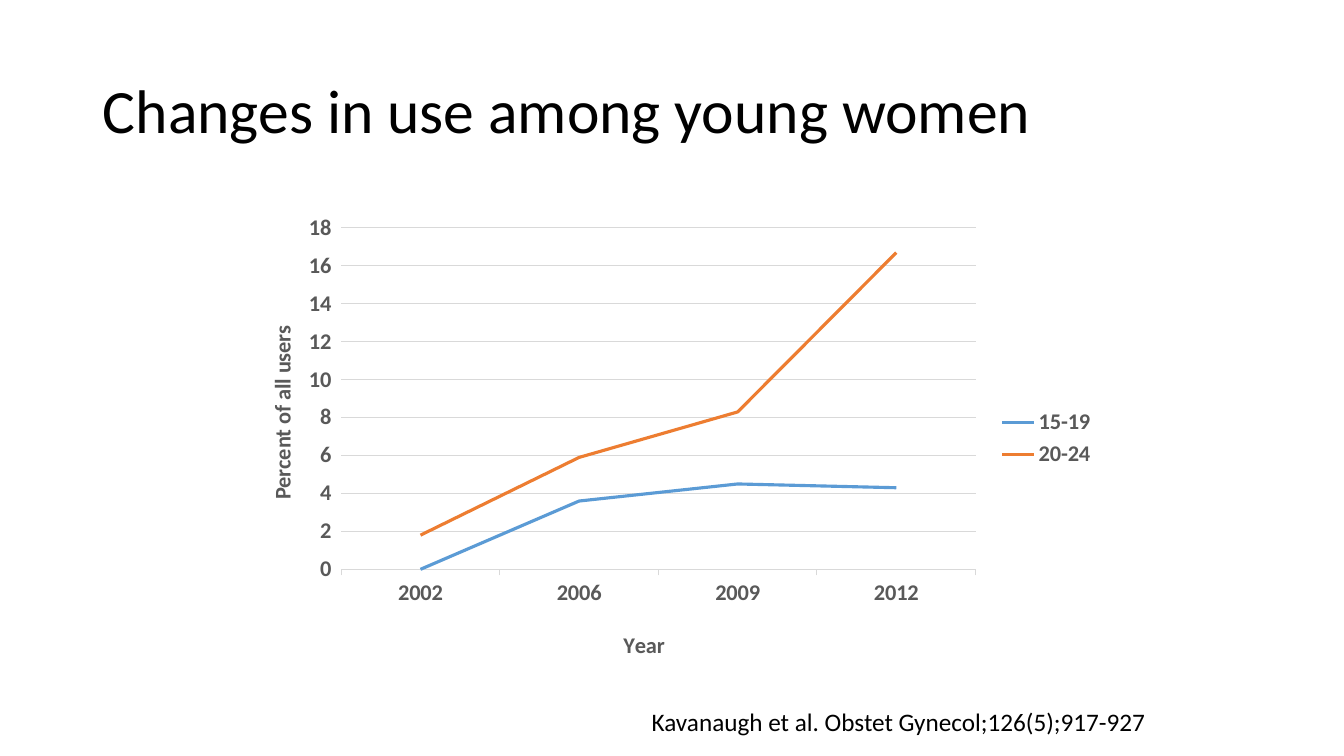
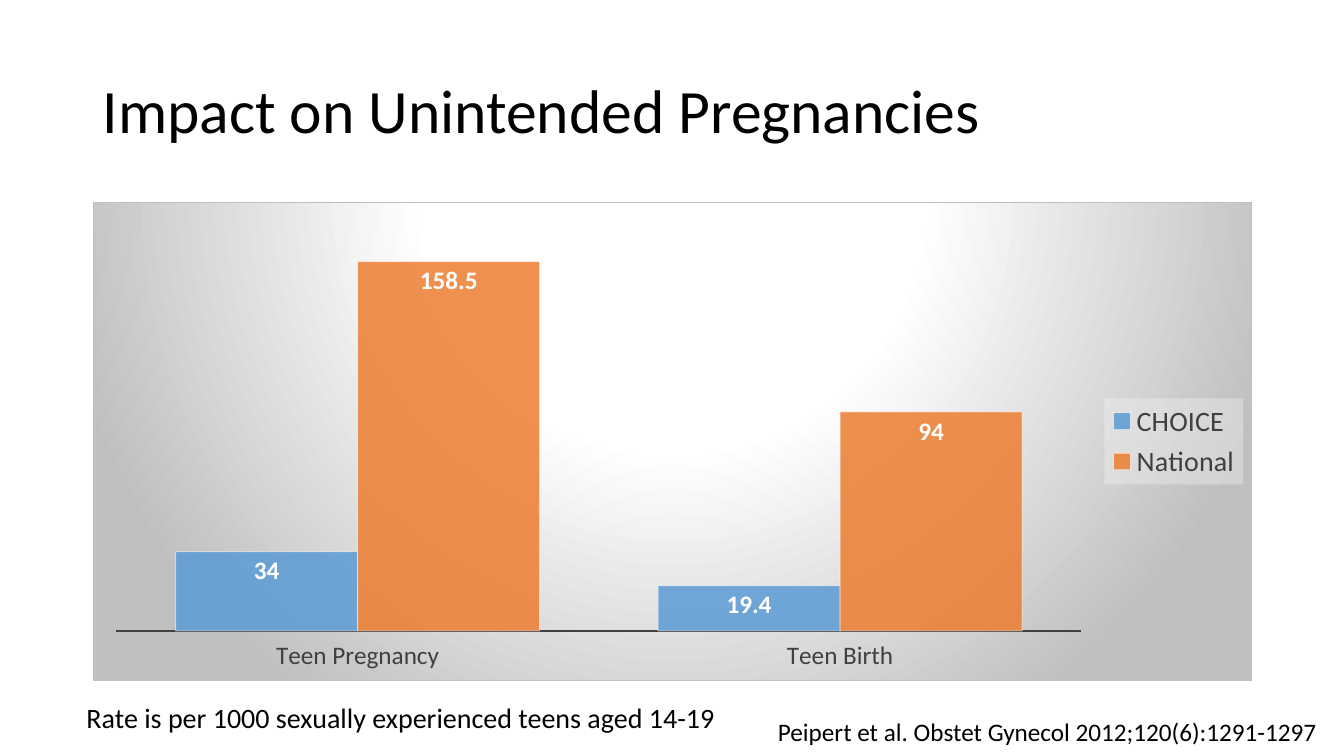
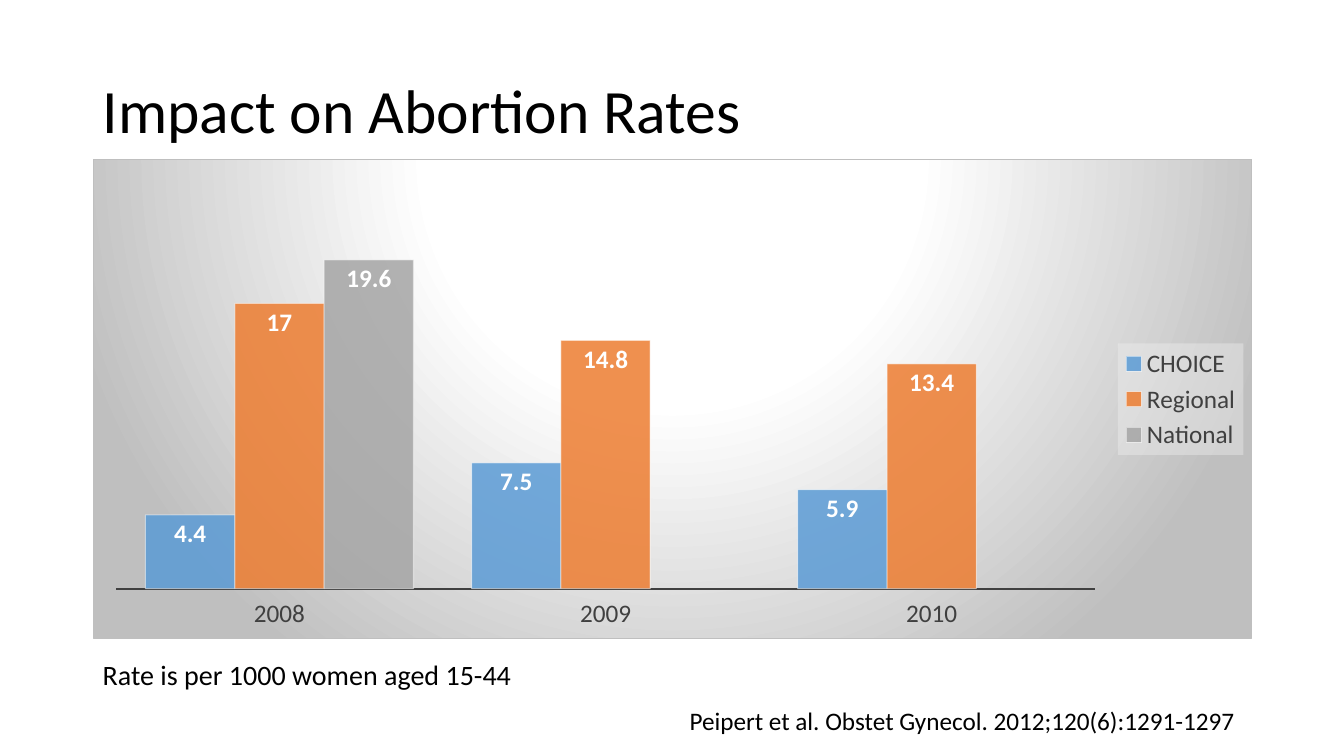
from lxml import etree
from pptx import Presentation
from pptx.chart.data import CategoryChartData
from pptx.dml.color import RGBColor
from pptx.enum.chart import (XL_CHART_TYPE, XL_LABEL_POSITION, XL_LEGEND_POSITION,
                             XL_TICK_LABEL_POSITION, XL_TICK_MARK)
from pptx.enum.text import MSO_ANCHOR, MSO_AUTO_SIZE, PP_ALIGN
from pptx.oxml import parse_xml
from pptx.oxml.ns import nsdecls, qn
from pptx.util import Pt

PX = 9144  # EMU per px, 100 px to the inch
FONT = "Calibri"
TITLE_ONLY = 5

LINE, COLUMN = XL_CHART_TYPE.LINE, XL_CHART_TYPE.COLUMN_CLUSTERED
LEFT, RIGHT = PP_ALIGN.LEFT, PP_ALIGN.RIGHT
OUT, NO_TICK = XL_TICK_MARK.OUTSIDE, XL_TICK_MARK.NONE

BLACK = RGBColor(0x00, 0x00, 0x00)
WHITE = RGBColor(0xFF, 0xFF, 0xFF)
GREY = RGBColor(0x59, 0x59, 0x59)
DARK = RGBColor(0x40, 0x40, 0x40)
GRID = RGBColor(0xD9, 0xD9, 0xD9)
BORDER = RGBColor(0xBF, 0xBF, 0xBF)
LEGEND_FILL = RGBColor(0xF2, 0xF2, 0xF2)
SERIES_COLORS = [RGBColor(0x5B, 0x9B, 0xD5), RGBColor(0xED, 0x7D, 0x31),
                 RGBColor(0xA5, 0xA5, 0xA5)]

# Content: notes are (text, box, size, alignment)
TITLE_BOX = (92, 40, 1150, 145)
SLIDES = [
    {"title": "Changes in use among young women",
     "chart": {"type": LINE, "box": (235, 203, 862, 464), "max": 18, "legend": 16,
               "cats": ["2002", "2006", "2009", "2012"],
               "series": {"15-19": [0, 3.6, 4.5, 4.3],
                          "20-24": [1.8, 5.9, 8.3, 16.7]}},
     "notes": [("Kavanaugh et al. Obstet Gynecol;126(5);917-927",
                (546, 696, 600, 40), 18, RIGHT)]},
    {"title": "Impact on Unintended Pregnancies",
     "chart": {"type": COLUMN, "box": (92, 200, 1150, 476), "max": 180, "legend": 20,
               "cats": ["Teen Pregnancy", "Teen Birth"],
               "series": {"CHOICE": [34, 19.4], "National": [158.5, 94]}},
     "notes": [("Peipert et al. Obstet Gynecol 2012;120(6):1291-1297",
                (651, 706, 665, 40), 18, RIGHT),
               ("Rate is per 1000 sexually experienced teens aged 14-19",
                (76, 690, 703, 44), 20, LEFT)]},
    {"title": "Impact on Abortion Rates",
     "chart": {"type": COLUMN, "box": (92, 158, 1150, 476), "max": 25, "legend": 18,
               "cats": ["2008", "2009", "2010"],
               "series": {"CHOICE": [4.4, 7.5, 5.9], "Regional": [17, 14.8, 13.4],
                          "National": [19.6, None, None]}},
     "notes": [("Peipert et al. Obstet Gynecol. 2012;120(6):1291-1297",
                (674, 695, 568, 40), 18, LEFT),
               ("Rate is per 1000 women aged 15-44",
                (92, 647, 433, 44), 20, LEFT)]},
]

# Line chart layout, as fractions of the chart
PLOT_LAYOUT = {"x": 0.12, "y": 0.05, "w": 0.73, "h": 0.73}
YEAR_LAYOUT = {"x": 0.44, "y": 0.9}
PERCENT_LAYOUT = {"x": 0.03, "y": 0.25}

PANEL_XML = f"""<c:spPr {nsdecls('c', 'a')}>
  <a:gradFill><a:gsLst>
    <a:gs pos="0"><a:srgbClr val="{WHITE}"/></a:gs>
    <a:gs pos="39000"><a:srgbClr val="{WHITE}"/></a:gs>
    <a:gs pos="100000"><a:srgbClr val="{BORDER}"/></a:gs>
  </a:gsLst><a:path path="circle">
    <a:fillToRect l="50000" t="-80000" r="50000" b="180000"/>
  </a:path></a:gradFill>
  <a:ln w="9525"><a:solidFill><a:srgbClr val="{BORDER}"/></a:solidFill></a:ln>
</c:spPr>"""
LEGEND_XML = f"""<c:spPr {nsdecls('c', 'a')}><a:solidFill>
  <a:srgbClr val="{LEGEND_FILL}"><a:alpha val="39000"/></a:srgbClr>
</a:solidFill></c:spPr>"""


def emu(box):
    return [v * PX for v in box]


def set_attrs(obj, **values):
    for name, value in values.items():
        setattr(obj, name, value)


def style_font(font, size, color, bold=False):
    set_attrs(font, name=FONT, size=Pt(size), bold=bold)
    font.color.rgb = color


def style_line(line, color, width):
    line.color.rgb = color
    line.width = Pt(width)


def write(tf, text, size, align, anchor):
    set_attrs(tf, word_wrap=True, vertical_anchor=anchor, auto_size=MSO_AUTO_SIZE.NONE)
    p = tf.paragraphs[0]
    p.alignment = align
    r = p.add_run()
    r.text = text
    style_font(r.font, size, BLACK)
    return p


def set_layout(parent, fractions, inner=False):
    layout = parent.find(qn("c:layout"))
    if layout is None:
        layout = etree.Element(qn("c:layout"))
        parent.insert(1 if parent.find(qn("c:tx")) is not None else 0, layout)
    manual = etree.SubElement(layout, qn("c:manualLayout"))
    entries = [("layoutTarget", "inner")] if inner else []
    entries += [(k + "Mode", "edge") for k in "xy"]
    entries += list(fractions.items())
    for tag, value in entries:
        etree.SubElement(manual, qn("c:" + tag)).set("val", str(value))


def style_lines(chart):
    cat, val = chart.category_axis, chart.value_axis
    for axis, text, layout, turn in ((cat, "Year", YEAR_LAYOUT, "0"),
                                     (val, "Percent of all users", PERCENT_LAYOUT, "-5400000")):
        axis.major_tick_mark = OUT
        style_font(axis.tick_labels.font, 16, GREY, True)
        tf = axis.axis_title.text_frame
        tf.text = text
        style_font(tf.paragraphs[0].runs[0].font, 16, GREY, True)
        body = tf._txBody.find(qn("a:bodyPr"))
        body.set("rot", turn)
        body.set("vert", "horz")
        set_layout(axis.axis_title._element, layout)
    style_line(cat.format.line, GRID, 0.75)
    val.format.line.fill.background()
    val.major_unit = 2
    style_line(val.major_gridlines.format.line, GRID, 0.75)
    set_layout(chart._chartSpace.chart.plotArea, PLOT_LAYOUT, inner=True)
    for ser, color in zip(chart.plots[0].series, SERIES_COLORS):
        ser.smooth = False
        style_line(ser.format.line, color, 2.25)


def style_columns(chart):
    cat, plot = chart.category_axis, chart.plots[0]
    cat.major_tick_mark = NO_TICK
    style_font(cat.tick_labels.font, 18, DARK)
    style_line(cat.format.line, DARK, 1.5)
    set_attrs(chart.value_axis, visible=False, has_major_gridlines=False)
    set_attrs(plot, gap_width=65, overlap=0, vary_by_categories=False)
    for ser, color in zip(plot.series, SERIES_COLORS):
        ser.format.fill.solid()
        ser.format.fill.fore_color.rgb = color
        style_line(ser.format.line, WHITE, 0.75)
        # Fill and outline opacity
        colors = ser._element.find(qn("c:spPr")).iter(qn("a:srgbClr"))
        for clr, alpha in zip(list(colors), ("85000", "50000")):
            etree.SubElement(clr, qn("a:alpha")).set("val", alpha)
        labels = ser.data_labels
        set_attrs(labels, show_value=True, position=XL_LABEL_POSITION.INSIDE_END)
        style_font(labels.font, 18, WHITE, True)
    # Gradient panel and translucent legend
    for parent, xml in ((chart._chartSpace, PANEL_XML), (chart.legend._element, LEGEND_XML)):
        parent.find(qn("c:txPr")).addprevious(parse_xml(xml))


def add_chart(s, spec_):
    data = CategoryChartData()
    data.categories = spec_["cats"]
    for name, values in spec_["series"].items():
        data.add_series(name, values)
    chart = s.shapes.add_chart(spec_["type"], *emu(spec_["box"]), data).chart
    is_line = spec_["type"] == LINE
    style_font(chart.font, 10, BLACK)
    set_attrs(chart, has_title=False, has_legend=True)
    set_attrs(chart.legend, position=XL_LEGEND_POSITION.RIGHT, include_in_layout=False)
    style_font(chart.legend.font, spec_["legend"], GREY if is_line else DARK, is_line)
    set_attrs(chart.value_axis, minimum_scale=0, maximum_scale=spec_["max"])
    chart.category_axis.tick_label_position = XL_TICK_LABEL_POSITION.LOW
    (style_lines if is_line else style_columns)(chart)


def main():
    prs = Presentation()
    set_attrs(prs, slide_width=1333 * PX, slide_height=750 * PX)
    for content in SLIDES:
        s = prs.slides.add_slide(prs.slide_layouts[TITLE_ONLY])
        title = s.shapes.title
        set_attrs(title, **dict(zip(("left", "top", "width", "height"), emu(TITLE_BOX))))
        p = write(title.text_frame, content["title"], 44, LEFT, MSO_ANCHOR.MIDDLE)
        p.line_spacing = 0.9
        add_chart(s, content["chart"])
        for text, box, size, align in content["notes"]:
            note = s.shapes.add_textbox(*emu(box))
            write(note.text_frame, text, size, align, MSO_ANCHOR.TOP)
    prs.save("out.pptx")


if __name__ == "__main__":
    main()
